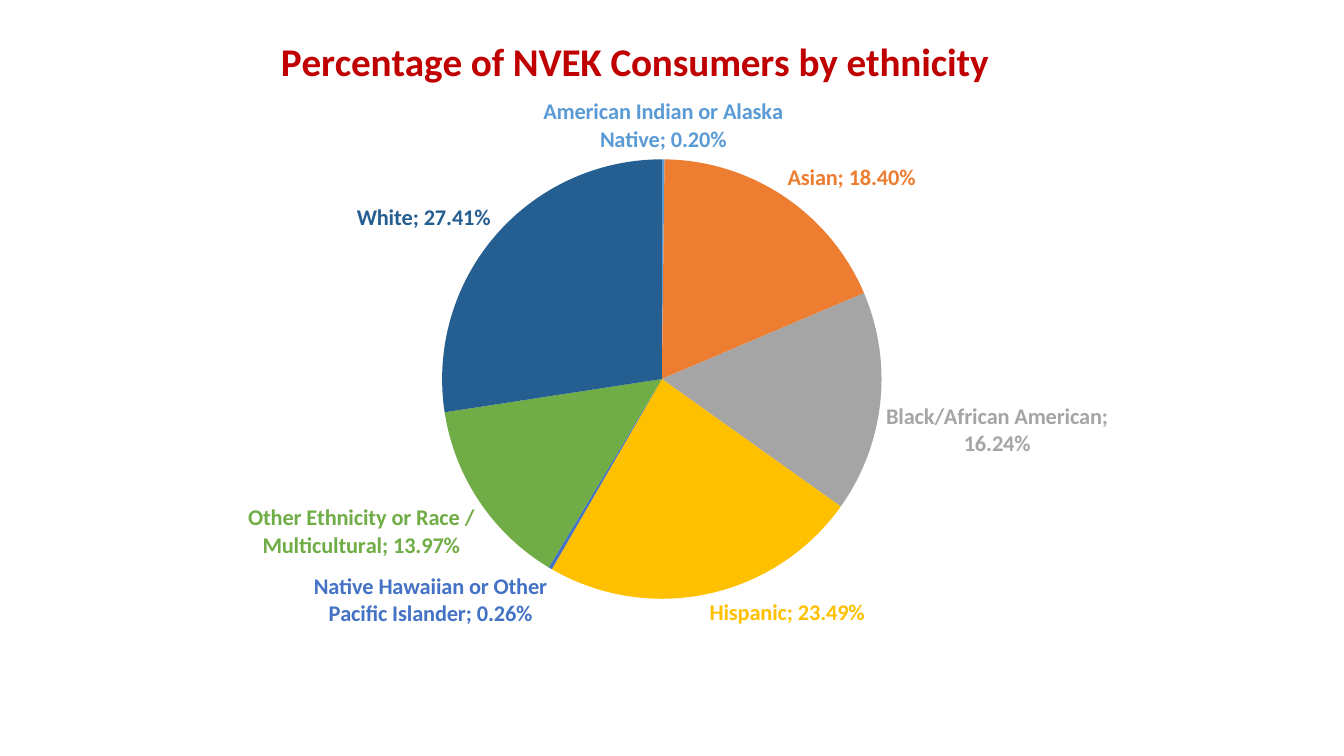
from dataclasses import dataclass

from lxml.etree import SubElement
from pptx import Presentation
from pptx.chart.data import CategoryChartData
from pptx.dml.color import RGBColor
from pptx.enum.chart import XL_CHART_TYPE, XL_LABEL_POSITION
from pptx.oxml import parse_xml
from pptx.oxml.ns import nsdecls, qn
from pptx.util import Cm, Pt


@dataclass(frozen=True)
class Theme:
    font: str = "Calibri"
    title_size: int = 28
    label_size: int = 16
    base_size: int = 10
    title_color: str = "C00000"
    text_color: str = "000000"
    percent_format: str = "0.00%"


# Ethnicity, share of consumers, slice and label colour
SHARES = [
    ("American Indian or Alaska Native", 0.002, "5B9BD5"),
    ("Asian", 0.184, "ED7D31"),
    ("Black/African American", 0.1624, "A5A5A5"),
    ("Hispanic", 0.2349, "FFC000"),
    ("Native Hawaiian or Other Pacific Islander", 0.0026, "4472C4"),
    ("Other Ethnicity or Race / Multicultural", 0.1397, "70AD47"),
    ("White", 0.2741, "255E91"),
]


def manual_layout(x, y, width=None, height=None):
    """Chart layout in fractions of the chart area."""
    inner = '<c:layoutTarget val="inner"/>' if width else ""
    size = f'<c:w val="{width}"/><c:h val="{height}"/>' if width else ""
    return parse_xml(
        f'<c:layout {nsdecls("c")}><c:manualLayout>{inner}'
        f'<c:xMode val="edge"/><c:yMode val="edge"/>'
        f'<c:x val="{x}"/><c:y val="{y}"/>{size}'
        f'</c:manualLayout></c:layout>')


def replace_layout(parent, layout, position):
    for old in parent.findall(qn("c:layout")):
        parent.remove(old)
    parent.insert(position, layout)


class SlideBuilder:
    def __init__(self, page, theme):
        self.page = page
        self.theme = theme

    def set_font(self, font, size, color, bold):
        font.name = self.theme.font
        font.size = Pt(size)
        font.bold = bold
        font.color.rgb = RGBColor.from_string(color)

    def pie(self, shares, left, top, width, height):
        data = CategoryChartData(number_format=self.theme.percent_format)
        data.categories = [name for name, _, _ in shares]
        data.add_series("Consumers", [value for _, value, _ in shares])
        chart = self.page.shapes.add_chart(
            XL_CHART_TYPE.PIE, left, top, width, height, data).chart
        chart.has_legend = False
        self.set_font(chart.font, self.theme.base_size,
                      self.theme.text_color, False)
        plot = chart.plots[0]
        plot.vary_by_categories = True
        for index, (_, _, color) in enumerate(shares):
            self.pie_slice(plot.series[0].points[index], color)
        self.pie_labels(plot.series[0].data_labels)
        plot_area = chart.element.find(".//" + qn("c:plotArea"))
        replace_layout(plot_area, manual_layout(0, 0.206, 1, 0.624), 0)
        return chart

    def pie_slice(self, point, color):
        point.format.fill.solid()
        point.format.fill.fore_color.rgb = RGBColor.from_string(color)
        point.format.line.fill.background()
        label = point.data_label
        self.set_font(label.font, self.theme.label_size, color, True)
        label.position = XL_LABEL_POSITION.OUTSIDE_END

    def pie_labels(self, labels):
        labels.number_format = self.theme.percent_format
        labels.number_format_is_linked = False
        labels.show_value = True
        labels.show_category_name = True
        labels.position = XL_LABEL_POSITION.OUTSIDE_END
        # Each slice label shows its category and value
        for label in labels._element.findall(qn("c:dLbl")):
            label.find(qn("c:showCatName")).set("val", "1")
            label.insert(1, parse_xml(
                f'<c:numFmt {nsdecls("c")} sourceLinked="0" '
                f'formatCode="{self.theme.percent_format}"/>'))
            SubElement(label, qn("c:separator")).text = "; "

    def chart_title(self, chart, text, x, y):
        frame = chart.chart_title.text_frame
        frame.text = text
        self.set_font(frame.paragraphs[0].font, self.theme.title_size,
                      self.theme.title_color, True)
        title = chart.element.find(".//" + qn("c:title"))
        replace_layout(title, manual_layout(x, y), 1)
        chart.chart_title.include_in_layout = False


def main():
    deck = Presentation()
    deck.slide_width, deck.slide_height = Cm(33.87), Cm(19.05)
    page = deck.slides.add_slide(deck.slide_layouts[6])
    builder = SlideBuilder(page, Theme())

    # Pie of consumers with its title
    chart = builder.pie(SHARES, Cm(1.4), Cm(0.36), Cm(30.56), Cm(17.75))
    builder.chart_title(
        chart, "Percentage of NVEK Consumers by ethnicity", 0.18, 0.02)

    deck.save("out.pptx")


if __name__ == "__main__":
    main()
